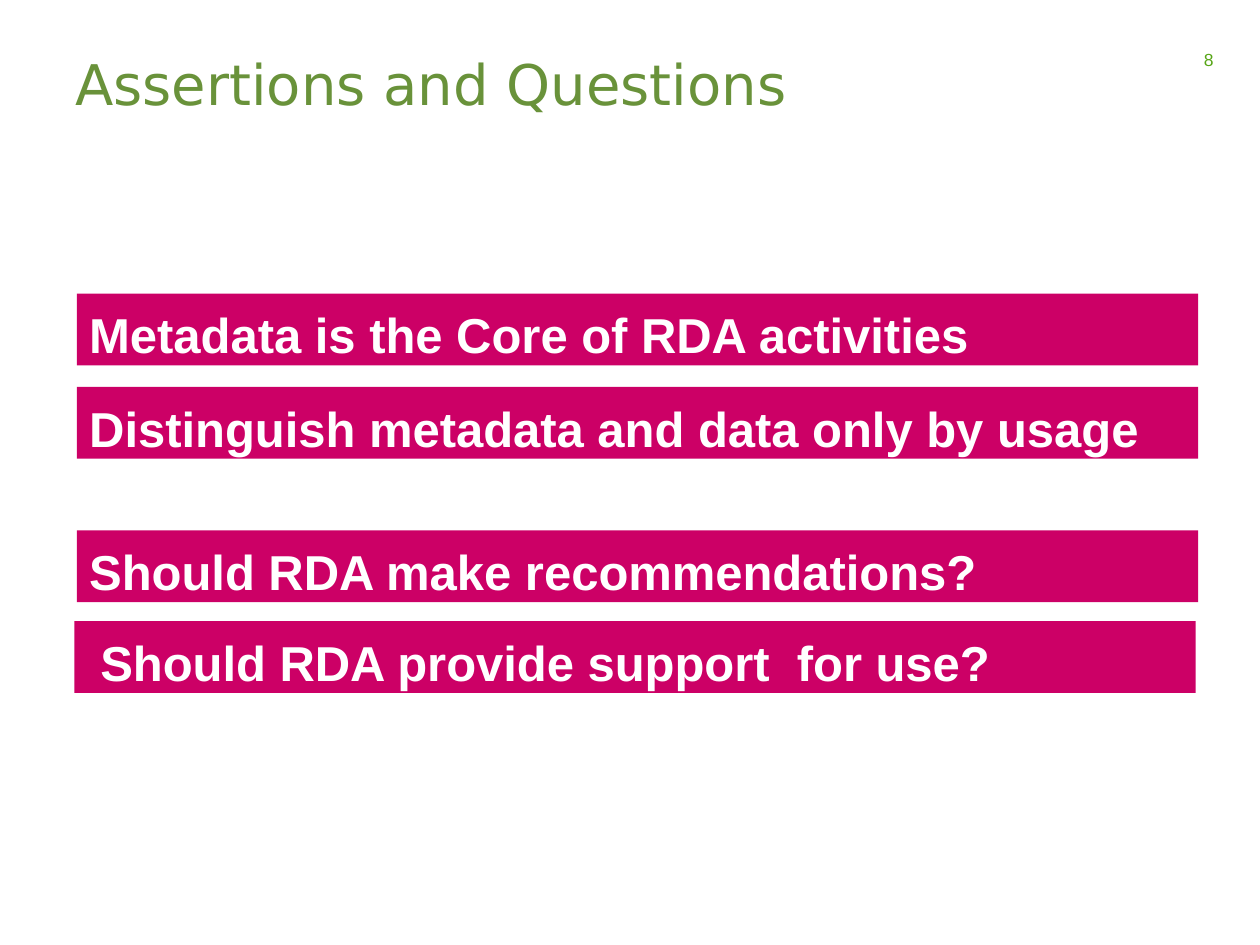
import pptx
import pptx.dml.color
import pptx.enum.shapes
import pptx.enum.text
import pptx.util

Inches = pptx.util.Inches
Align = pptx.enum.text.PP_ALIGN
Anchor = pptx.enum.text.MSO_ANCHOR

COLORS = {"title": "69923A", "number": "58A618", "bar": "CC0066", "bar_text": "FFFFFF"}


class SlideBuilder:
    body_font = "Arial"
    title_font = "DejaVu Sans"

    def __init__(self, slide):
        self.slide = slide

    def color(self, name):
        return pptx.dml.color.RGBColor.from_string(COLORS[name])

    def set_text(self, shape, text, size, color, font, bold=False,
                 align=Align.LEFT, anchor=Anchor.TOP, top_margin=0.05):
        text_frame = shape.text_frame
        text_frame.text = text
        text_frame.word_wrap = True
        text_frame.vertical_anchor = anchor
        text_frame.margin_top = Inches(top_margin)
        text_frame.margin_bottom = Inches(0.02)
        paragraph = text_frame.paragraphs[0]
        paragraph.alignment = align
        for run in paragraph.runs:
            run.font.name = font
            run.font.size = pptx.util.Pt(size)
            run.font.bold = bold
            run.font.color.rgb = self.color(color)

    def title(self, text):
        shape = self.slide.shapes.add_textbox(Inches(0.5), Inches(0.3), Inches(9), Inches(1.25))
        self.set_text(shape, text, 32, "title", self.title_font, top_margin=0.09)

    def page_number(self, text):
        shape = self.slide.shapes.add_textbox(Inches(9.09), Inches(0.36), Inches(0.64), Inches(0.22))
        self.set_text(shape, text, 10, "number", self.body_font,
                      align=Align.RIGHT, anchor=Anchor.MIDDLE, top_margin=0.02)

    def bar(self, text, left, top):
        shape = self.slide.shapes.add_shape(
            pptx.enum.shapes.MSO_SHAPE.RECTANGLE,
            Inches(left), Inches(top), Inches(8.9), Inches(0.57))
        shape.shadow.inherit = False
        shape.fill.solid()
        shape.fill.fore_color.rgb = self.color("bar")
        shape.line.fill.background()
        self.set_text(shape, text, 28, "bar_text", self.body_font, bold=True, top_margin=0.09)


def main():
    presentation = pptx.Presentation()
    presentation.slide_width = Inches(10)
    presentation.slide_height = Inches(7.5)
    builder = SlideBuilder(presentation.slides.add_slide(presentation.slide_layouts[6]))
    builder.page_number("8")
    builder.title("Assertions and Questions")
    for text, left, top in (
        ("Metadata is the Core of RDA activities", 0.61, 2.33),
        ("Distinguish metadata and data only by usage", 0.61, 3.07),
        ("Should RDA make recommendations?", 0.61, 4.21),
        (" Should RDA provide support  for use?", 0.59, 4.93),
    ):
        builder.bar(text, left, top)
    presentation.save("out.pptx")


if __name__ == "__main__":
    main()
